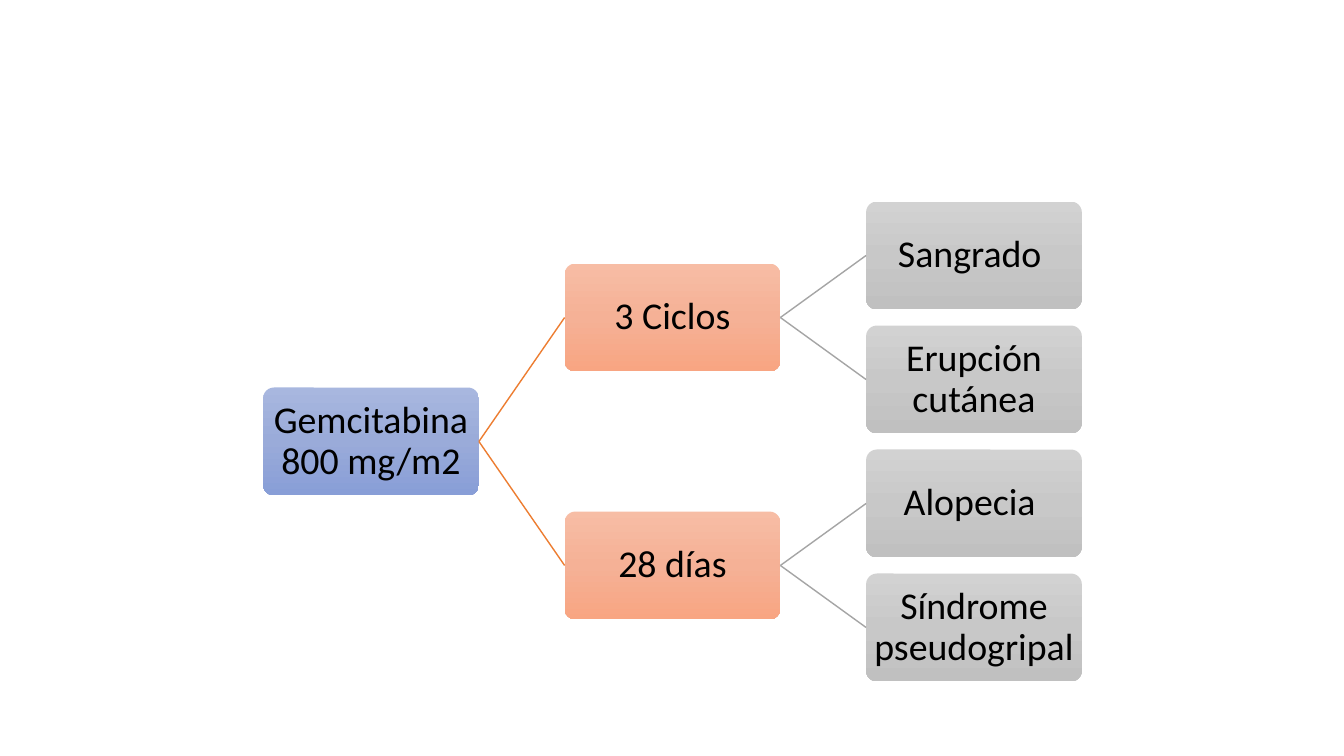
import copy

import pptx
import pptx.dml.color
import pptx.enum.shapes
import pptx.enum.text
import pptx.oxml.ns
import pptx.util

Inches = pptx.util.Inches
Pt = pptx.util.Pt

BOX_WIDTH, BOX_HEIGHT = 2.14, 1.07
COLUMN_STEP, ROW_STEP = 2.99, 1.23

# One entry per level: gradient from top to bottom
LEVEL_GRADIENTS = [
    ("A8B7DF", "9AABD9", "889ED7"),
    ("F7BDA5", "F5B196", "F8A582"),
    ("D2D2D2", "C8C8C8", "C0C0C0"),
]
# Colour of the lines that leave each level
LINE_COLORS = ["ED7D31", "A5A5A5"]

TREATMENT = ("Gemcitabina 800 mg/m2", [
    ("3 Ciclos", [("Sangrado ", []), ("Erupción cutánea", [])]),
    ("28 días", [("Alopecia ", []), ("Síndrome pseudogripal", [])]),
])


def color(value):
    return pptx.dml.color.RGBColor.from_string(value)


def fill_gradient(shape, colors):
    """Fill with evenly spaced colours running from top to bottom."""
    shape.fill.gradient()
    shape.fill.gradient_angle = 270
    first_stop = shape._element.spPr.find(".//" + pptx.oxml.ns.qn("a:gs"))
    first_stop.addnext(copy.deepcopy(first_stop))
    for index, (stop, value) in enumerate(zip(shape.fill.gradient_stops, colors)):
        stop.position = index / (len(colors) - 1)
        stop.color.rgb = color(value)


def add_box(page, left, top, text, colors):
    box = page.shapes.add_shape(
        pptx.enum.shapes.MSO_SHAPE.ROUNDED_RECTANGLE,
        Inches(left), Inches(top), Inches(BOX_WIDTH), Inches(BOX_HEIGHT))
    box.adjustments[0] = 0.1
    box.shadow.inherit = False
    box.line.fill.background()
    fill_gradient(box, colors)

    frame = box.text_frame
    frame.text = text
    frame.word_wrap = True
    frame.vertical_anchor = pptx.enum.text.MSO_ANCHOR.MIDDLE
    frame.margin_left = frame.margin_right = Inches(0.02)
    frame.margin_top = frame.margin_bottom = Inches(0.02)
    para = frame.paragraphs[0]
    para.alignment = pptx.enum.text.PP_ALIGN.CENTER
    para.line_spacing = 0.9
    font = para.runs[0].font
    font.name = "Calibri"
    font.size = Pt(27)
    font.color.rgb = color("000000")
    return box


def join_boxes(page, parent, child, line_color):
    link = page.shapes.add_connector(
        pptx.enum.shapes.MSO_CONNECTOR.STRAIGHT, 0, 0, 0, 0)
    link.begin_connect(parent, 3)
    link.end_connect(child, 1)
    link.line.color.rgb = color(line_color)
    link.line.width = Pt(1)
    link._element.spPr.append(pptx.oxml.parse_xml(
        "<a:effectLst %s/>" % pptx.oxml.ns.nsdecls("a")))


def count_leaves(node):
    return sum(map(count_leaves, node[1])) or 1


def add_tree(page, left, top, node, level=0):
    """Draw a node centred beside its children and return its box."""
    text, children = node
    offset = (count_leaves(node) - 1) * ROW_STEP / 2
    box = add_box(page, left, top + offset, text, LEVEL_GRADIENTS[level])
    for child in children:
        child_box = add_tree(page, left + COLUMN_STEP, top, child, level + 1)
        join_boxes(page, box, child_box, LINE_COLORS[level])
        top += count_leaves(child) * ROW_STEP
    return box


def main():
    deck = pptx.Presentation()
    deck.slide_width = Inches(13.33)
    deck.slide_height = Inches(7.5)
    page = deck.slides.add_slide(deck.slide_layouts[6])
    add_tree(page, 2.61, 2, TREATMENT)
    deck.save("out.pptx")


if __name__ == "__main__":
    main()
